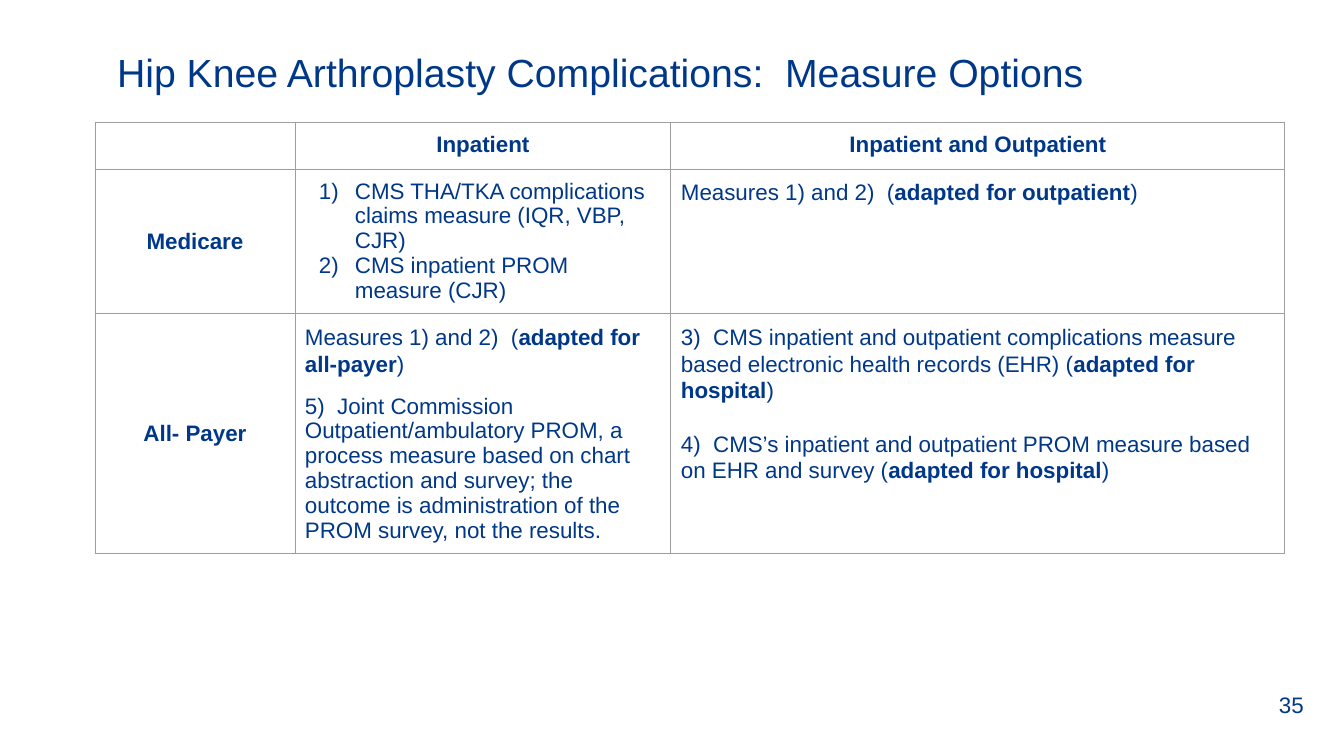
from dataclasses import dataclass

from lxml.etree import SubElement
from pptx import Presentation
from pptx.dml.color import RGBColor
from pptx.enum.text import MSO_ANCHOR as Anchor, MSO_AUTO_SIZE as AutoSize, PP_ALIGN as Align
from pptx.oxml import parse_xml
from pptx.oxml.ns import nsdecls, qn
from pptx.util import Emu, Pt

EMU_PER_PX = 914400 / 100.8


@dataclass(frozen=True)
class Theme:
    font: str = "Arial"
    ink: str = "003889"
    border: str = "9E9E9E"
    title_size: int = 28
    body_size: int = 16
    border_width: float = 0.75


@dataclass(frozen=True)
class Span:
    text: str
    bold: bool = False


@dataclass(frozen=True)
class Para:
    spans: tuple[Span, ...]
    centred: bool = False
    numbered: bool = False
    line_spacing: float | None = None
    space_before: int = 0


@dataclass(frozen=True)
class Entry:
    paras: tuple[Para, ...] = ()
    middle: bool = False


THEME = Theme()
COLUMN_WIDTHS = (200, 376, 614)
ROW_HEIGHTS = (47, 145, 239)
CELL_MARGIN = 10
NUMBER_INDENT, NUMBER_HANG = 50, 36


def px(length: int) -> Emu:
    return Emu(round(length * EMU_PER_PX))


def heading(text: str, middle: bool = False) -> Entry:
    return Entry((Para((Span(text, True),), centred=True),), middle)


def numbered(text: str) -> Para:
    return Para((Span(text),), numbered=True)


def adapted(lead: str, target: str, space_before: int = 0) -> Para:
    """A measure whose adaptation is bold inside parentheses."""
    spans = (Span(f"{lead} ("), Span(f"adapted for {target}", True), Span(")"))
    return Para(spans, line_spacing=1.07, space_before=space_before)


JOINT_COMMISSION = Para((Span(
    "5)  Joint Commission Outpatient/ambulatory PROM, a process measure based on chart "
    "abstraction and survey; the outcome is administration of the PROM survey, not the results."
),), space_before=12)

MEASURES = (
    (Entry(), heading("Inpatient"), heading("Inpatient and Outpatient")),
    (
        heading("Medicare", middle=True),
        Entry((numbered("CMS THA/TKA complications claims measure (IQR, VBP, CJR)"),
               numbered("CMS inpatient PROM measure (CJR)"))),
        Entry((adapted("Measures 1) and 2) ", "outpatient"),)),
    ),
    (
        heading("All- Payer", middle=True),
        Entry((adapted("Measures 1) and 2) ", "all-payer"), JOINT_COMMISSION)),
        Entry((
            adapted("3)  CMS inpatient and outpatient complications measure based "
                    "electronic health records (EHR)", "hospital"),
            adapted("4)  CMS’s inpatient and outpatient PROM measure based on EHR and survey",
                    "hospital", space_before=19),
        )),
    ),
)


def set_font(paragraph, size: int) -> None:
    font = paragraph.font
    font.name, font.size = THEME.font, Pt(size)
    font.color.rgb = RGBColor.from_string(THEME.ink)


def add_number(paragraph) -> None:
    properties = paragraph._p.get_or_add_pPr()
    properties.set("marL", str(px(NUMBER_INDENT)))
    properties.set("indent", str(px(-NUMBER_HANG)))
    colour = SubElement(properties, qn("a:buClr"))
    SubElement(colour, qn("a:srgbClr"), val=THEME.ink)
    SubElement(properties, qn("a:buFont"), typeface=THEME.font)
    SubElement(properties, qn("a:buAutoNum"), type="arabicParenR")


def write_para(paragraph, para: Para) -> None:
    paragraph.alignment = Align.CENTER if para.centred else Align.LEFT
    if para.line_spacing:
        paragraph.line_spacing = para.line_spacing
    if para.space_before:
        paragraph.space_before = Pt(para.space_before)
    if para.numbered:
        add_number(paragraph)
    set_font(paragraph, THEME.body_size)
    for span in para.spans:
        run = paragraph.add_run()
        run.text, run.font.bold = span.text, span.bold


def add_borders(cell) -> None:
    properties = cell._tc.get_or_add_tcPr()
    for position, side in enumerate(("lnL", "lnR", "lnT", "lnB")):
        properties.insert(position, parse_xml(
            f'<a:{side} {nsdecls("a")} w="{Pt(THEME.border_width)}"><a:solidFill>'
            f'<a:srgbClr val="{THEME.border}"/></a:solidFill></a:{side}>'))


def fill_cell(cell, entry: Entry) -> None:
    cell.fill.background()
    add_borders(cell)
    cell.vertical_anchor = Anchor.MIDDLE if entry.middle else Anchor.TOP
    if entry.paras:
        cell.margin_left = cell.margin_right = px(CELL_MARGIN)
        cell.margin_top = cell.margin_bottom = px(CELL_MARGIN)
    frame = cell.text_frame
    for index, para in enumerate(entry.paras):
        write_para(frame.add_paragraph() if index else frame.paragraphs[0], para)


def add_measures(page) -> None:
    frame = page.shapes.add_table(
        len(ROW_HEIGHTS), len(COLUMN_WIDTHS),
        px(95), px(122), px(sum(COLUMN_WIDTHS)), px(sum(ROW_HEIGHTS)))
    table = frame.table
    table.first_row = table.horz_banding = False
    for column, width in zip(table.columns, COLUMN_WIDTHS):
        column.width = px(width)
    for row, height, entries in zip(table.rows, ROW_HEIGHTS, MEASURES):
        row.height = px(height)
        for cell, entry in zip(row.cells, entries):
            fill_cell(cell, entry)


def write_line(box, text: str, size: int) -> None:
    """Put one left-aligned line in a box, centred vertically."""
    frame = box.text_frame
    frame.word_wrap, frame.auto_size = True, AutoSize.NONE
    frame.vertical_anchor = Anchor.MIDDLE
    frame.text = text
    frame.paragraphs[0].alignment = Align.LEFT
    set_font(frame.paragraphs[0], size)


def main() -> None:
    deck = Presentation()
    deck.slide_width, deck.slide_height = px(1344), px(756)
    page = deck.slides.add_slide(deck.slide_layouts[5])
    title = page.shapes.title
    title.left, title.top, title.width, title.height = px(107), px(38), px(1159), px(67)
    write_line(title, "Hip Knee Arthroplasty Complications:  Measure Options", THEME.title_size)
    add_measures(page)
    page_number = page.shapes.add_textbox(px(1269), px(685), px(64), px(40))
    write_line(page_number, "35", THEME.body_size)
    deck.save("out.pptx")


if __name__ == "__main__":
    main()
